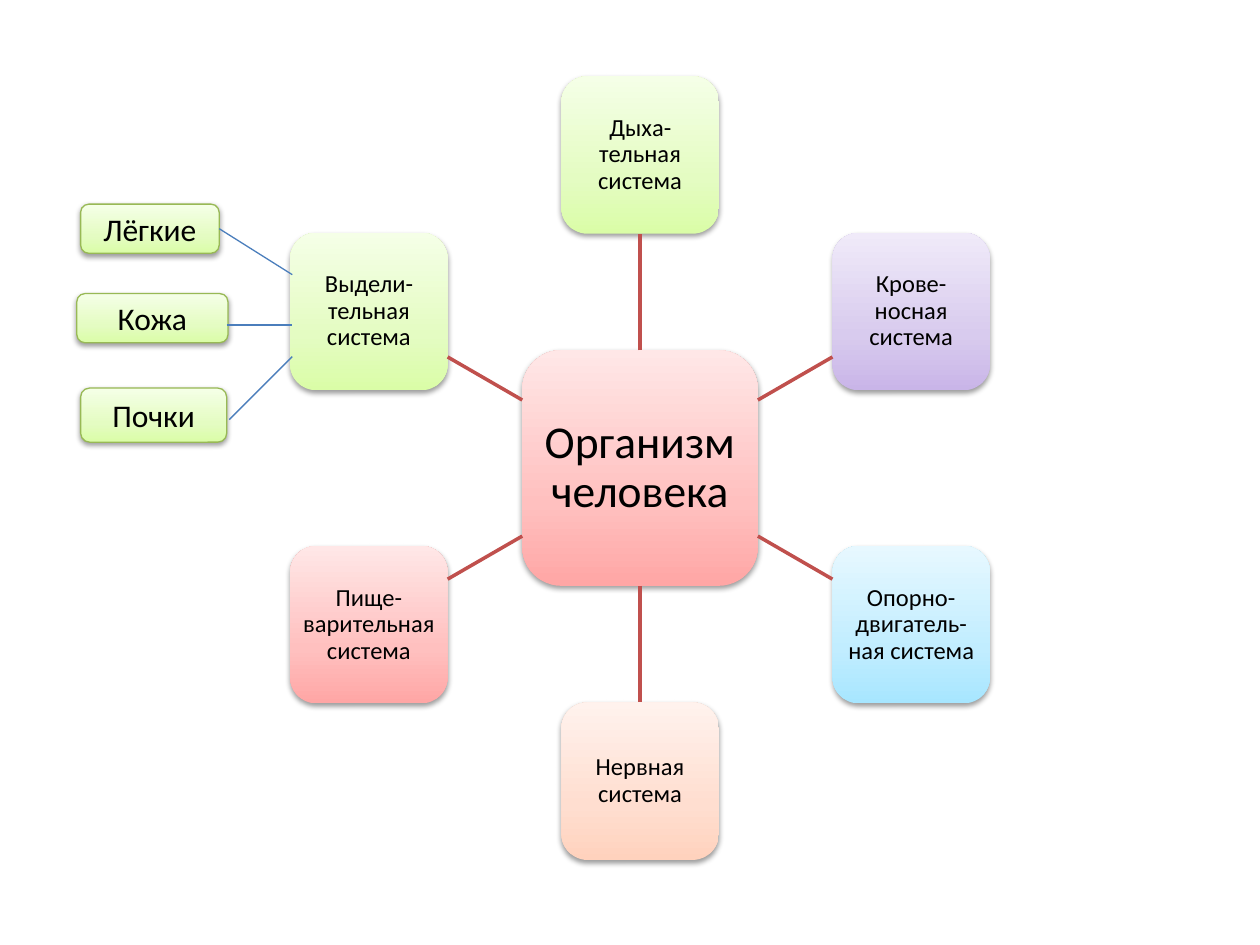
import copy
import math

import pptx
import pptx.dml.color
import pptx.enum.shapes
import pptx.enum.text
import pptx.oxml
import pptx.oxml.ns
import pptx.util

# Grid of 100 columns by 75 rows; all lengths below are in grid cells
COLUMNS, ROWS = 100, 75
CELL = pptx.util.Inches(10) // COLUMNS

HUB_X, HUB_Y, HUB = 50.8, 37.15, 18.7
NODE, ORBIT = 12.5, 24.85

# Gradient colours from bottom to top
STOPS = (0, 0.35, 1)
GREEN = ("DAFDA7", "E4FCC2", "F5FFE7")
RED = ("FFA6A5", "FFC0BF", "FFE7E7")
PURPLE = ("C9B5E8", "D8CBEE", "F0EAF9")
BLUE = ("A7E6FF", "C1EDFF", "E7F8FF")
ORANGE = ("FFD2BD", "FFDED0", "FFF2ED")

# Body systems, clockwise from the top
SYSTEMS = [
    ("Дыха-тельная система", GREEN),
    ("Крове-носная система", PURPLE),
    ("Опорно-двигатель-ная система", BLUE),
    ("Нервная система", ORANGE),
    ("Пище-варительная система", RED),
    ("Выдели-тельная система", GREEN),
]

# Organs: name, box, start and end of the link
ORGANS = [
    ("Лёгкие", (6.4, 16.2, 11, 3.9), (17.4, 18.2), (23.2, 21.8)),
    ("Кожа", (6.1, 23.3, 12, 3.9), (18, 25.8), (23.2, 25.8)),
    ("Почки", (6.4, 30.8, 11.6, 4.3), (18.2, 33.3), (23.2, 28.3)),
]


def cells(*values):
    return [round(v * CELL) for v in values]


def rgb(value):
    return pptx.dml.color.RGBColor.from_string(value)


def gradient(fill, colors):
    fill.gradient()
    fill.gradient_angle = 90
    first = fill.gradient_stops[0]
    gs_list = fill.gradient_stops[0]._gs.getparent()
    gs_list.append(copy.deepcopy(first._gs))
    for stop, position, color in zip(fill.gradient_stops, STOPS, colors):
        stop.position = position
        stop.color.rgb = rgb(color)


def soft_shadow(sp):
    sp.shadow.inherit = False
    effects = sp._element.spPr.find(pptx.oxml.ns.qn("a:effectLst"))
    effects.append(pptx.oxml.parse_xml(
        f'<a:outerShdw {pptx.oxml.ns.nsdecls("a")} blurRad="39370" '
        'dist="20320" dir="5400000" rotWithShape="0">'
        '<a:srgbClr val="000000"><a:alpha val="38000"/></a:srgbClr>'
        '</a:outerShdw>'))


def add_box(s, text, box, colors, size, border=None):
    sp = s.shapes.add_shape(
        pptx.enum.shapes.MSO_SHAPE.ROUNDED_RECTANGLE, *cells(*box))
    gradient(sp.fill, colors)
    if border:
        sp.line.color.rgb = rgb(border)
        sp.line.width = pptx.util.Pt(0.75)
    else:
        sp.line.fill.background()
    soft_shadow(sp)
    tf = sp.text_frame
    tf.word_wrap = True
    tf.vertical_anchor = pptx.enum.text.MSO_ANCHOR.MIDDLE
    p = tf.paragraphs[0]
    p.alignment = pptx.enum.text.PP_ALIGN.CENTER
    r = p.add_run()
    r.text = text
    r.font.size = pptx.util.Pt(size)
    r.font.name = "Calibri"
    r.font.color.rgb = rgb("000000")
    return sp


def add_square(s, text, x, y, side, colors, size, margin):
    sp = add_box(s, text, (x - side / 2, y - side / 2, side, side), colors, size)
    tf = sp.text_frame
    tf.margin_left = tf.margin_right = pptx.util.Inches(margin)
    tf.margin_top = tf.margin_bottom = pptx.util.Inches(margin)
    tf.paragraphs[0].line_spacing = 0.9
    return sp


def add_line(s, start, end, color, width):
    line = s.shapes.add_connector(
        pptx.enum.shapes.MSO_CONNECTOR.STRAIGHT, *cells(*start, *end))
    line.line.color.rgb = rgb(color)
    line.line.width = pptx.util.Pt(width)
    line._element.spPr.append(pptx.oxml.parse_xml(
        f'<a:effectLst {pptx.oxml.ns.nsdecls("a")}/>'))
    return line


def add_wheel(s):
    hub = add_square(s, "Организм человека", HUB_X, HUB_Y, HUB, RED, 26, 0.07)
    for i, (name, colors) in enumerate(SYSTEMS):
        angle = math.radians(i * 360 / len(SYSTEMS) - 90)
        dx, dy = math.cos(angle), math.sin(angle)

        def along(distance):
            return HUB_X + distance * dx, HUB_Y + distance * dy

        node = add_square(s, name, *along(ORBIT), NODE, colors, 14, 0.04)
        # The spoke runs from the hub's edge to the node's edge
        reach = 2 * max(abs(dx), abs(dy))
        spoke = add_line(s, along(HUB / reach), along(ORBIT - NODE / reach),
                         "C0504D", 2)
        if abs(dx) < 0.01:
            hub_side, node_side = (0, 2) if dy < 0 else (2, 0)
            spoke.begin_connect(hub, hub_side)
            spoke.end_connect(node, node_side)


def add_organs(s):
    for i, (name, box, start, end) in enumerate(ORGANS):
        organ = add_box(s, name, box, GREEN, 18, "98B955")
        link = add_line(s, start, end, "4B7EBC", 0.75)
        if i == 0:
            link.begin_connect(organ, 3)


def main():
    prs = pptx.Presentation()
    prs.slide_width, prs.slide_height = COLUMNS * CELL, ROWS * CELL
    s = prs.slides.add_slide(prs.slide_layouts[6])
    # Hub with the body systems around it
    add_wheel(s)
    # Organs of the excretory system
    add_organs(s)
    prs.save("out.pptx")


if __name__ == "__main__":
    main()
